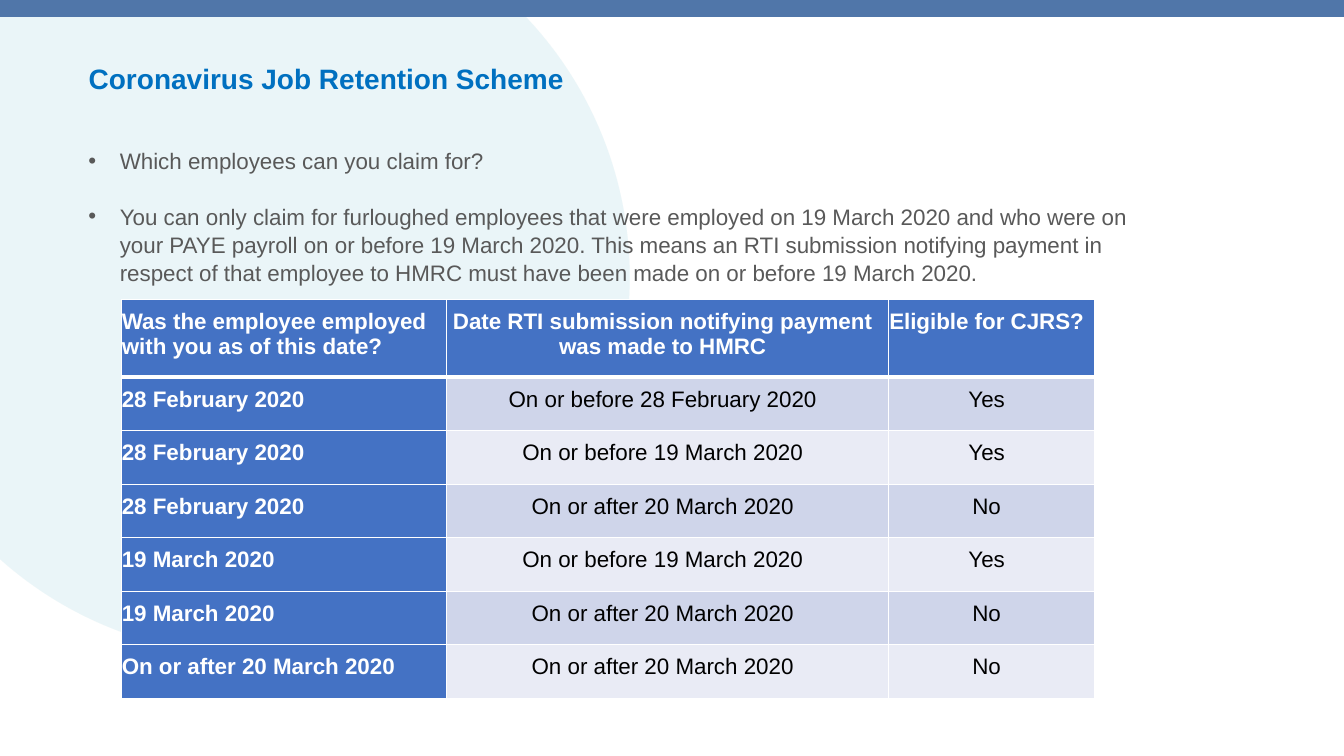
from lxml.etree import SubElement
from pptx import Presentation
from pptx.dml.color import RGBColor
from pptx.enum.shapes import MSO_SHAPE
from pptx.enum.text import MSO_ANCHOR, MSO_AUTO_SIZE, PP_ALIGN
from pptx.oxml.ns import qn
from pptx.util import Cm, Pt

WHITE = RGBColor(0xFF, 0xFF, 0xFF)
BLACK = RGBColor(0x00, 0x00, 0x00)
PALE_TEAL = RGBColor(0xE2, 0xF2, 0xF6)
STEEL_BLUE = RGBColor(0x50, 0x76, 0xA9)
TITLE_BLUE = RGBColor(0x00, 0x70, 0xC0)
BODY_GREY = RGBColor(0x59, 0x59, 0x59)
HEADER_BLUE = RGBColor(0x44, 0x72, 0xC4)
BANDS = (RGBColor(0xE9, 0xEB, 0xF5), RGBColor(0xCF, 0xD5, 0xEA))

BULLETS = [
    "Which employees can you claim for?",
    "You can only claim for furloughed employees that were employed on "
    "19 March 2020 and who were on your PAYE payroll on or before "
    "19 March 2020. This means an RTI submission notifying payment in respect "
    "of that employee to HMRC must have been made on or before 19 March 2020.",
]
ELIGIBILITY = [
    ("Was the employee employed with you as of this date?",
     "Date RTI submission notifying payment was made to HMRC",
     "Eligible for CJRS?"),
    ("28 February 2020", "On or before 28 February 2020", "Yes"),
    ("28 February 2020", "On or before 19 March 2020", "Yes"),
    ("28 February 2020", "On or after 20 March 2020", "No"),
    ("19 March 2020", "On or before 19 March 2020", "Yes"),
    ("19 March 2020", "On or after 20 March 2020", "No"),
    ("On or after 20 March 2020", "On or after 20 March 2020", "No"),
]


class SchemeSlide:
    font_name = "Arial"
    text_size = 16

    def __init__(self, deck):
        self.slide = deck.slides.add_slide(deck.slide_layouts[5])
        self.shapes = self.slide.shapes

    def style(self, paragraph, color, size=text_size, bold=False):
        font = paragraph.font
        font.name, font.size, font.bold = self.font_name, Pt(size), bold
        font.color.rgb = color

    def decoration(self, preset, left, top, width, height, color, opacity=100):
        decoration = self.shapes.add_shape(
            preset, Cm(left), Cm(top), Cm(width), Cm(height))
        decoration.shadow.inherit = False
        decoration.line.fill.background()
        decoration.fill.solid()
        decoration.fill.fore_color.rgb = color
        if opacity < 100:
            tint = decoration.fill._xPr.find(".//" + qn("a:srgbClr"))
            SubElement(tint, qn("a:alpha"), val=str(opacity * 1000))

    def title(self, text, left, top, width, height):
        title = self.shapes.title
        # Bring the title in front of the decoration
        self.shapes._spTree.append(title._element)
        title.left, title.top = Cm(left), Cm(top)
        title.width, title.height = Cm(width), Cm(height)
        frame = title.text_frame
        frame.text = text
        frame.word_wrap = False
        frame.auto_size = MSO_AUTO_SIZE.SHAPE_TO_FIT_TEXT
        frame.vertical_anchor = MSO_ANCHOR.TOP
        heading = frame.paragraphs[0]
        heading.alignment = PP_ALIGN.LEFT
        heading.line_spacing = 1.0
        self.style(heading, TITLE_BLUE, size=20, bold=True)

    def bullets(self, texts, left, top, width, height):
        frame = self.shapes.add_textbox(
            Cm(left), Cm(top), Cm(width), Cm(height)).text_frame
        frame.word_wrap = True
        frame.auto_size = MSO_AUTO_SIZE.SHAPE_TO_FIT_TEXT
        for index, text in enumerate(texts):
            bullet = frame.add_paragraph() if index else frame.paragraphs[0]
            bullet.text = text
            bullet.line_spacing = 1.05
            if index:
                bullet.space_before = Pt(19.4)
            properties = bullet._p.get_or_add_pPr()
            properties.set("marL", str(Cm(0.79)))
            properties.set("indent", str(-Cm(0.79)))
            SubElement(properties, qn("a:buFont"), typeface=self.font_name)
            SubElement(properties, qn("a:buChar"), char="•")
            self.style(bullet, BODY_GREY)

    def borders(self, cell, top=1, bottom=1):
        properties = cell._tc.get_or_add_tcPr()
        for side, width in (("L", 1), ("R", 1), ("T", top), ("B", bottom)):
            line = SubElement(properties, qn("a:ln" + side), w=str(Pt(width)))
            fill = SubElement(line, qn("a:solidFill"))
            SubElement(fill, qn("a:srgbClr"), val=str(WHITE))

    def table(self, rows, left, top, widths, header_height, row_height):
        heights = [header_height] + [row_height] * (len(rows) - 1)
        table = self.shapes.add_table(
            len(rows), len(widths), Cm(left), Cm(top),
            Cm(sum(widths)), Cm(sum(heights))).table
        table.first_col = True
        for column, width in zip(table.columns, widths):
            column.width = Cm(width)
        for r, (texts, height) in enumerate(zip(rows, heights)):
            table.rows[r].height = Cm(height)
            for c, text in enumerate(texts):
                heading = r == 0 or c == 0
                cell = table.cell(r, c)
                # The rule under the header row is heavier
                self.borders(cell, top=3 if r == 1 else 1,
                             bottom=3 if r == 0 else 1)
                cell.fill.solid()
                cell.fill.fore_color.rgb = HEADER_BLUE if heading else BANDS[r % 2]
                cell.margin_left = 0
                cell.margin_right = cell.margin_top = cell.margin_bottom = Cm(0.25)
                cell.text = text
                entry = cell.text_frame.paragraphs[0]
                entry.alignment = PP_ALIGN.CENTER if c else PP_ALIGN.LEFT
                self.style(entry, WHITE if heading else BLACK, bold=heading)


def main():
    deck = Presentation()
    deck.slide_width, deck.slide_height = Cm(33.87), Cm(19.05)
    scheme = SchemeSlide(deck)

    # Background: two translucent circles layered under the top bar
    for _ in range(2):
        scheme.decoration(MSO_SHAPE.OVAL, -3.18, -2.54, 19.05, 19.05,
                          PALE_TEAL, opacity=45)
    scheme.decoration(MSO_SHAPE.RECTANGLE, 0, 0, 33.87, 0.43, STEEL_BLUE)

    # Title and rules
    scheme.title("Coronavirus Job Retention Scheme", 1.98, 1.42, 12.6, 1.12)
    scheme.bullets(BULLETS, 1.98, 3.56, 26.7, 3.68)

    # Eligibility table
    scheme.table(ELIGIBILITY, 3.07, 7.54, (8.18, 11.15, 5.18), 1.96, 1.35)

    deck.save("out.pptx")


if __name__ == "__main__":
    main()
